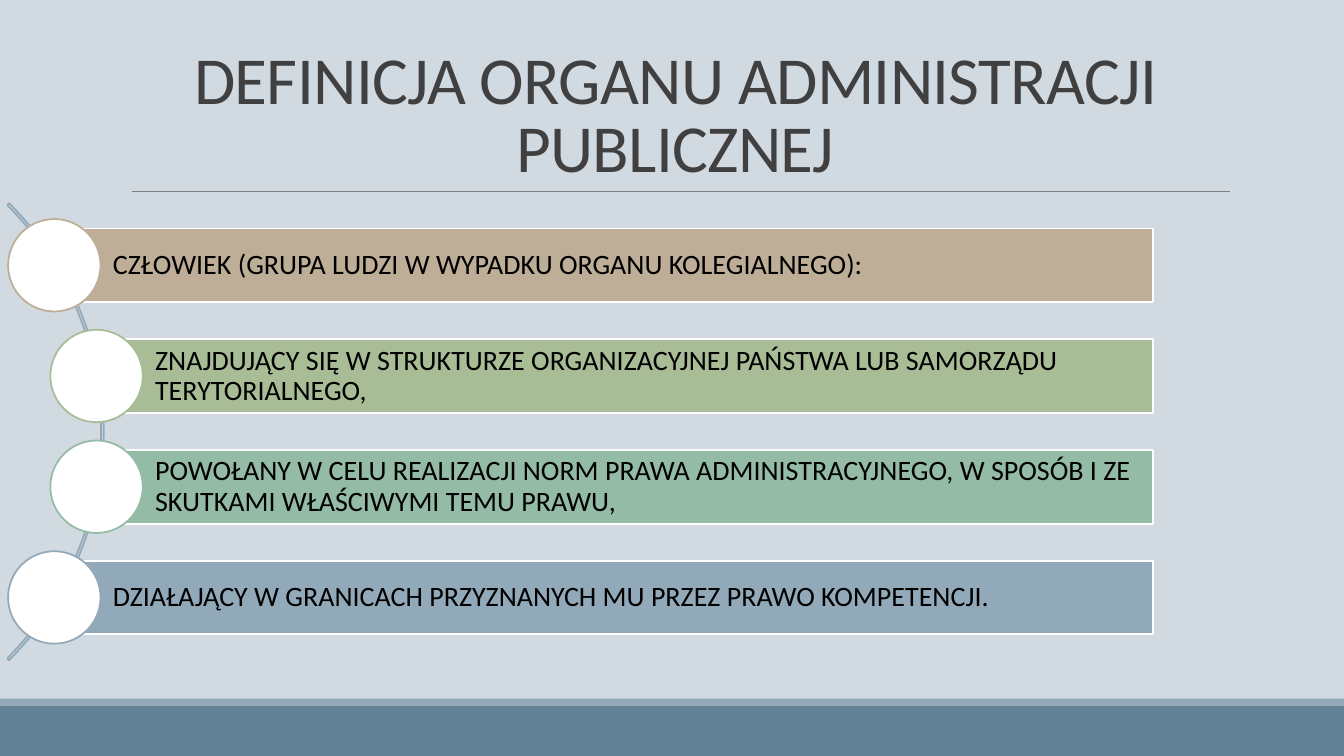
from dataclasses import dataclass

from pptx import Presentation
from pptx.dml.color import RGBColor
from pptx.enum.shapes import MSO_CONNECTOR, MSO_SHAPE
from pptx.enum.text import MSO_ANCHOR, MSO_AUTO_SIZE, PP_ALIGN
from pptx.oxml.ns import qn
from pptx.util import Pt
from lxml import etree

RECTANGLE = MSO_SHAPE.RECTANGLE
OVAL = MSO_SHAPE.OVAL
BLOCK_ARC = MSO_SHAPE.BLOCK_ARC
STRAIGHT = MSO_CONNECTOR.STRAIGHT
MIDDLE, BOTTOM = MSO_ANCHOR.MIDDLE, MSO_ANCHOR.BOTTOM
LEFT, CENTER = PP_ALIGN.LEFT, PP_ALIGN.CENTER
NO_AUTOFIT = MSO_AUTO_SIZE.NONE
TITLE_ONLY_LAYOUT = 5


@dataclass(frozen=True)
class Theme:
    font: str = "Calibri"
    title_size: float = 48
    bar_size: float = 20
    outline: float = 1.25
    hairline: float = 0.5
    background: str = "D1D9E1"
    footer: str = "618197"
    accent: str = "92A9B9"
    rule: str = "808080"
    title: str = "404040"
    text: str = "000000"
    white: str = "FFFFFF"
    sand: str = "BEAE98"
    olive: str = "A8BC96"
    mint: str = "94BBA6"


class SlideBuilder:
    def __init__(self, slide, theme):
        self.slide = slide
        self.theme = theme
        fill = slide.background.fill
        fill.solid()
        fill.fore_color.rgb = RGBColor.from_string(theme.background)

    def shape(self, kind, left, top, width, height, fill=None, line=None):
        shape = self.slide.shapes.add_shape(
            kind, Pt(left), Pt(top), Pt(width), Pt(height))
        shape.shadow.inherit = False
        if fill:
            shape.fill.solid()
            shape.fill.fore_color.rgb = RGBColor.from_string(fill)
        else:
            shape.fill.background()
        if line:
            shape.line.color.rgb = RGBColor.from_string(line)
            shape.line.width = Pt(self.theme.outline)
        else:
            shape.line.fill.background()
        return shape

    def rule(self, left, right, y):
        line = self.slide.shapes.add_connector(
            STRAIGHT, Pt(left), Pt(y), Pt(right), Pt(y))
        line.line.color.rgb = RGBColor.from_string(self.theme.rule)
        line.line.width = Pt(self.theme.hairline)
        etree.SubElement(line._element.spPr, qn("a:effectLst"))

    def set_text(self, shape, text, size, color, align, anchor, spacing):
        frame = shape.text_frame
        frame.text = text
        frame.word_wrap = True
        frame.auto_size = NO_AUTOFIT
        frame.vertical_anchor = anchor
        para = frame.paragraphs[0]
        para.alignment = align
        para.line_spacing = spacing
        span = para.runs[0]
        span.font.name = self.theme.font
        span.font.size = Pt(size)
        span.font.color.rgb = RGBColor.from_string(color)
        return span

    def title(self, text, left, top, width, height):
        box = self.slide.shapes.title
        box.left, box.top = Pt(left), Pt(top)
        box.width, box.height = Pt(width), Pt(height)
        span = self.set_text(box, text, self.theme.title_size,
                             self.theme.title, CENTER, BOTTOM, 0.85)
        span.font._element.set("spc", "-50")

    def arc(self, left, top, diameter):
        arc = self.shape(BLOCK_ARC, left, top, diameter, diameter,
                         line=self.theme.accent)
        # Start and end angles (315° and 45°), then relative thickness
        for index, value in enumerate((189, 27, 0.004)):
            arc.adjustments[index] = value

    def bar(self, text, color, left, right, middle, height, circle):
        bar = self.shape(RECTANGLE, left, middle - height / 2, right - left,
                         height, color, self.theme.white)
        frame = bar.text_frame
        frame.margin_left = Pt(41.8)
        frame.margin_top = frame.margin_right = frame.margin_bottom = Pt(4)
        self.set_text(bar, text, self.theme.bar_size, self.theme.text,
                      LEFT, MIDDLE, 0.9)
        self.shape(OVAL, left - circle / 2, middle - circle / 2, circle,
                   circle, self.theme.white, color)


def main():
    theme = Theme()
    deck = Presentation()
    deck.slide_width, deck.slide_height = Pt(960), Pt(540)
    page = SlideBuilder(
        deck.slides.add_slide(deck.slide_layouts[TITLE_ONLY_LAYOUT]), theme)

    # Footer bands and title
    page.shape(RECTANGLE, 0, 504, 960, 36, theme.footer)
    page.shape(RECTANGLE, 0, 499, 960, 5, theme.accent)
    page.rule(94.3, 878.8, 136.8)
    page.title("DEFINICJA ORGANU ADMINISTRACJI PUBLICZNEJ",
               86.4, 22.3, 792, 114.5)

    # Curved list: inner bars sit further right along the arc
    outer, inner = 38.8, 69
    page.arc(-387.4, 77.6, 461.5)
    bars = [
        ("CZŁOWIEK (GRUPA LUDZI W WYPADKU ORGANU KOLEGIALNEGO):",
         theme.sand, outer),
        ("ZNAJDUJĄCY SIĘ W STRUKTURZE ORGANIZACYJNEJ PAŃSTWA LUB SAMORZĄDU "
         "TERYTORIALNEGO,", theme.olive, inner),
        ("POWOŁANY W CELU REALIZACJI NORM PRAWA ADMINISTRACYJNEGO, W SPOSÓB "
         "I ZE SKUTKAMI WŁAŚCIWYMI TEMU PRAWU,", theme.mint, inner),
        ("DZIAŁAJĄCY W GRANICACH PRZYZNANYCH MU PRZEZ PRAWO KOMPETENCJI.",
         theme.accent, outer),
    ]
    for row, (text, color, left) in enumerate(bars):
        page.bar(text, color, left, right=823.4, middle=189.5 + row * 79.1,
                 height=52.7, circle=66)

    deck.save("out.pptx")


if __name__ == "__main__":
    main()
